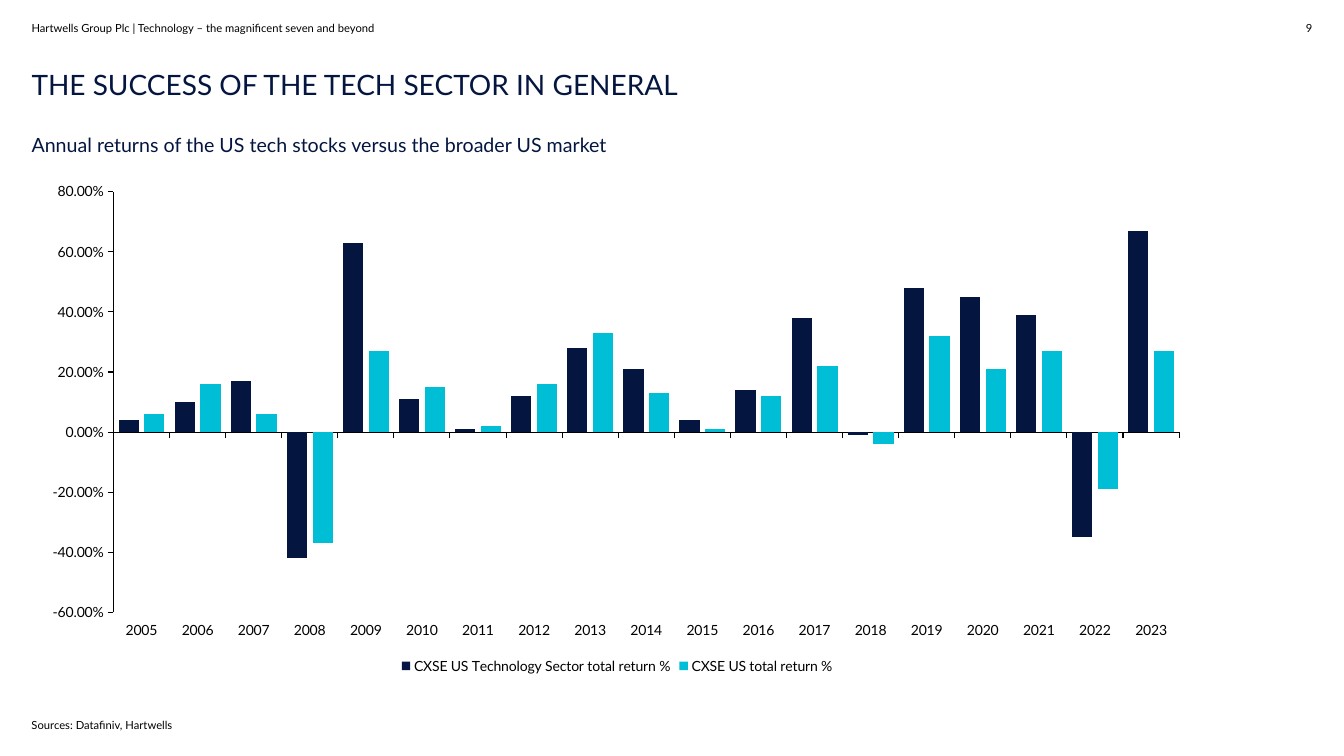
from lxml.etree import SubElement
from pptx import Presentation
from pptx.chart.data import CategoryChartData
from pptx.dml.color import RGBColor
from pptx.enum.chart import XL_CHART_TYPE, XL_LEGEND_POSITION, XL_TICK_LABEL_POSITION, XL_TICK_MARK
from pptx.enum.text import MSO_ANCHOR, PP_ALIGN
from pptx.oxml.ns import qn
from pptx.util import Pt

# Content
HEADER = "Hartwells Group Plc | Technology – the magnificent seven and beyond"
PAGE_NUMBER = "9"
TITLE = "THE SUCCESS OF THE TECH SECTOR IN GENERAL"
SUBTITLE = "Annual returns of the US tech stocks versus the broader US market"
SOURCES = "Sources: Datafiniv, Hartwells"
YEARS = [str(year) for year in range(2005, 2024)]
RETURNS = {
    "CXSE US Technology Sector total return %": [
        0.04, 0.1, 0.17, -0.42, 0.63, 0.11, 0.01, 0.12, 0.28, 0.21,
        0.04, 0.14, 0.38, -0.01, 0.48, 0.45, 0.39, -0.35, 0.67],
    "CXSE US total return %": [
        0.06, 0.16, 0.06, -0.37, 0.27, 0.15, 0.02, 0.16, 0.33, 0.13,
        0.01, 0.12, 0.22, -0.04, 0.32, 0.21, 0.27, -0.19, 0.27],
}

THEME = {
    "font": "Lato",
    "black": RGBColor.from_string("000000"),
    "navy": RGBColor.from_string("041640"),
    "cyan": RGBColor.from_string("00BED6"),
    "small": 8, "chart": 10, "subtitle": 14, "title": 20,
}
LEFT = 22.5
TEXT_WIDTH = 602.5
# Inner plot area as fractions of the chart frame
PLOT = {"x": 0.07, "y": 0.04, "w": 0.91, "h": 0.83}

# text, left, top, width, height, size, colour, line spacing, alignment, anchor
TEXTS = [
    (HEADER, LEFT, 16, TEXT_WIDTH, 9.5, "small", "black", 0.98, PP_ALIGN.LEFT, MSO_ANCHOR.TOP),
    (PAGE_NUMBER, 882, 16, 55.5, 9.5, "small", "black", 0.98, PP_ALIGN.RIGHT, MSO_ANCHOR.TOP),
    (TITLE, LEFT, 50.5, TEXT_WIDTH, 22, "title", "navy", 0.92, PP_ALIGN.LEFT, MSO_ANCHOR.TOP),
    (SUBTITLE, LEFT, 95, TEXT_WIDTH, 17, "subtitle", "navy", 1.02, PP_ALIGN.LEFT, MSO_ANCHOR.TOP),
    (SOURCES, LEFT, 513.5, 446.5, 9.5, "small", "black", 0.98, PP_ALIGN.LEFT, MSO_ANCHOR.BOTTOM),
]


def style_font(font, size, colour):
    font.name = THEME["font"]
    font.size = Pt(THEME[size])
    font.color.rgb = THEME[colour]


def add_text(page, text, left, top, width, height, size, colour, spacing, align, anchor):
    box = page.shapes.add_textbox(Pt(left), Pt(top), Pt(width), Pt(height))
    frame = box.text_frame
    frame.word_wrap = True
    frame.vertical_anchor = anchor
    frame.margin_left = frame.margin_right = frame.margin_top = frame.margin_bottom = 0
    frame.text = text
    para = frame.paragraphs[0]
    para.alignment = align
    para.line_spacing = spacing
    style_font(para.runs[0].font, size, colour)


def style_axis(axis):
    axis.has_major_gridlines = False
    axis.major_tick_mark = XL_TICK_MARK.OUTSIDE
    axis.minor_tick_mark = XL_TICK_MARK.NONE
    axis.format.line.color.rgb = THEME["black"]
    axis.format.line.width = Pt(0.75)
    style_font(axis.tick_labels.font, "chart", "black")


def fix_plot_area(chart):
    plot_area = chart.plots[0]._element.getparent()
    layout = plot_area.find(qn("c:layout"))
    if layout is None:
        layout = SubElement(plot_area, qn("c:layout"))
        plot_area.insert(0, layout)
    manual = SubElement(layout, qn("c:manualLayout"))
    settings = {"layoutTarget": "inner", "xMode": "edge", "yMode": "edge", **PLOT}
    for name, value in settings.items():
        SubElement(manual, qn("c:" + name)).set("val", str(value))


def add_returns_chart(page):
    data = CategoryChartData(number_format="0.00%")
    data.categories = YEARS
    for name, values in RETURNS.items():
        data.add_series(name, values)
    chart = page.shapes.add_chart(
        XL_CHART_TYPE.COLUMN_CLUSTERED, Pt(LEFT), Pt(122.5), Pt(836.5), Pt(362), data).chart
    chart.has_title = False
    style_font(chart.font, "chart", "black")

    # Columns
    plot = chart.plots[0]
    plot.vary_by_categories = False
    plot.gap_width = 50
    plot.overlap = -27
    for series, colour in zip(plot.series, ("navy", "cyan")):
        series.invert_if_negative = False
        series.format.fill.solid()
        series.format.fill.fore_color.rgb = THEME[colour]

    # Axes
    style_axis(chart.category_axis)
    chart.category_axis.tick_label_position = XL_TICK_LABEL_POSITION.LOW
    value_axis = chart.value_axis
    style_axis(value_axis)
    value_axis.minimum_scale = -0.6
    value_axis.maximum_scale = 0.8
    value_axis.major_unit = 0.2
    value_axis.tick_labels.number_format = "0.00%"
    value_axis.tick_labels.number_format_is_linked = False

    # Legend
    chart.has_legend = True
    chart.legend.position = XL_LEGEND_POSITION.BOTTOM
    chart.legend.include_in_layout = False
    style_font(chart.legend.font, "chart", "black")
    fix_plot_area(chart)


def main():
    deck = Presentation()
    deck.slide_width, deck.slide_height = Pt(960), Pt(540)
    page = deck.slides.add_slide(deck.slide_layouts[6])
    for entry in TEXTS:
        add_text(page, *entry)
    add_returns_chart(page)
    deck.save("out.pptx")


if __name__ == "__main__":
    main()
